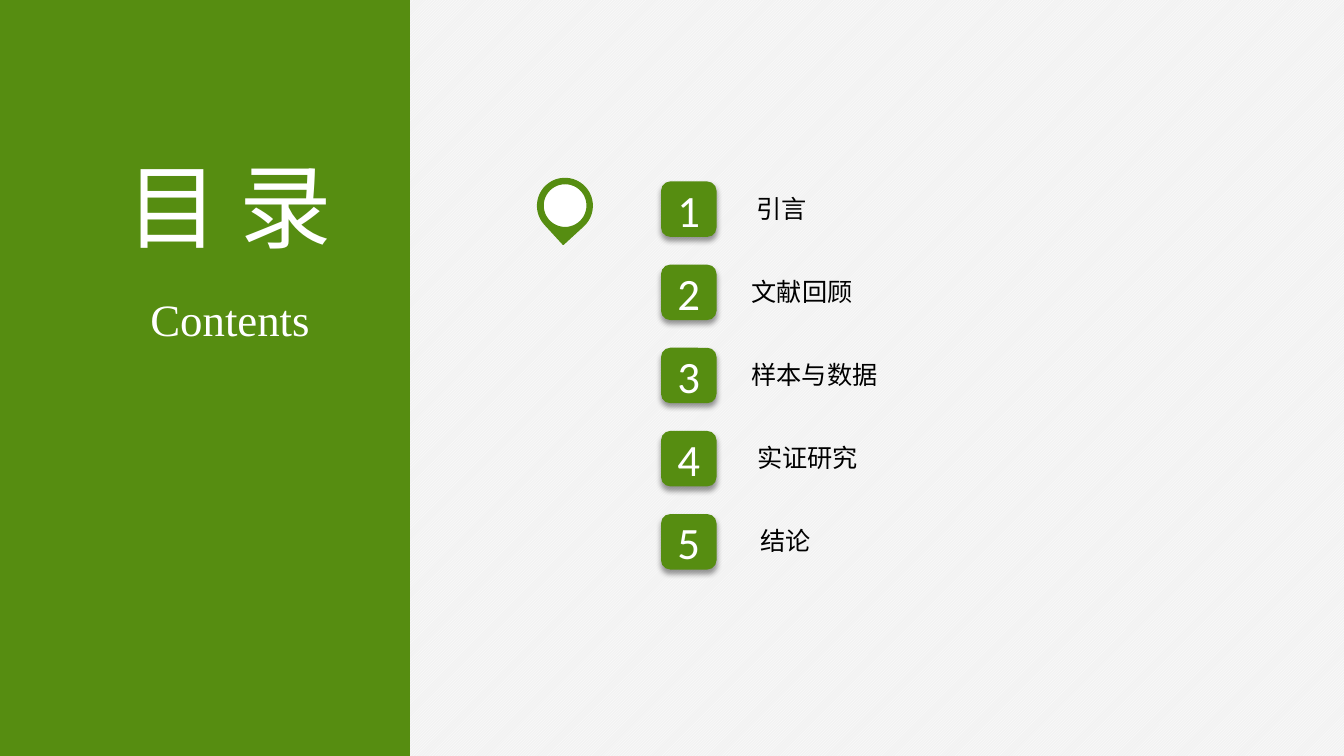
from dataclasses import dataclass

from lxml.etree import SubElement
from pptx import Presentation
from pptx.dml.color import RGBColor
from pptx.enum.dml import MSO_PATTERN
from pptx.enum.shapes import MSO_SHAPE as Shape
from pptx.enum.text import MSO_ANCHOR as Anchor, MSO_AUTO_SIZE as AutoSize, PP_ALIGN as Align
from pptx.oxml.ns import qn
from pptx.util import Emu, Pt

COLS, ROWS = 160, 90
UNIT = 76200  # one grid cell is 1/12 inch square

GREEN = RGBColor(0x56, 0x8D, 0x11)
WHITE = RGBColor(0xFF, 0xFF, 0xFF)
BLACK = RGBColor(0x00, 0x00, 0x00)
PALE_GREY = RGBColor(0xF2, 0xF2, 0xF2)

CJK, SERIF, SANS = "Noto Sans CJK SC", "Times New Roman", "Calibri"

BADGE_COL, BADGE_ROW, BADGE_SIZE = 78.7, 21.6, 6.6
LABEL_ROW, LABEL_HEIGHT = 22.4, 4.8
PITCH = 9.9


@dataclass(frozen=True)
class Box:
    """A rectangle in grid columns and rows."""
    col: float
    row: float
    cols: float
    rows: float

    def emu(self) -> list[Emu]:
        return [Emu(round(v * UNIT)) for v in (self.col, self.row, self.cols, self.rows)]


@dataclass(frozen=True)
class TextStyle:
    font: str
    size: float
    color: RGBColor


@dataclass(frozen=True)
class Chapter:
    title: str
    col: float
    align: Align = Align.CENTER


CHAPTERS = [
    Chapter("引言", 88.8),
    Chapter("文献回顾", 88.3, Align.LEFT),
    Chapter("样本与数据", 88.3, Align.LEFT),
    Chapter("实证研究", 88.9),
    Chapter("结论", 89.3),
]
BADGE_STYLE = TextStyle(SANS, 32, WHITE)
LABEL_STYLE = TextStyle(CJK, 18, BLACK)


def write(s, text: str, style: TextStyle, align: Align = Align.CENTER) -> None:
    p = s.text_frame.paragraphs[0]
    p.alignment = align
    r = p.add_run()
    r.text = text
    r.font.size = Pt(style.size)
    r.font.color.rgb = style.color
    r.font.name = style.font
    SubElement(r.font._element, qn("a:ea"), typeface=style.font)


def add_text(shapes, box: Box, text: str, style: TextStyle, align: Align = Align.CENTER) -> None:
    s = shapes.add_textbox(*box.emu())
    s.text_frame.word_wrap = False
    s.text_frame.auto_size = AutoSize.SHAPE_TO_FIT_TEXT
    write(s, text, style, align)


def add_filled(shapes, kind: Shape, box: Box, fill: RGBColor, line: RGBColor | None = None):
    s = shapes.add_shape(kind, *box.emu())
    s.shadow.inherit = False
    s.fill.solid()
    s.fill.fore_color.rgb = fill
    if line is None:
        s.line.fill.background()
    else:
        s.line.color.rgb = line
        s.line.width = Pt(1)
    return s


def drop_shadow(s) -> None:
    """Give the shape a soft black shadow straight below it."""
    effects = s._element.spPr.find(qn("a:effectLst"))
    shadow = SubElement(effects, qn("a:outerShdw"), blurRad=str(Pt(4)), dist=str(Pt(3)),
                        dir="5400000", algn="t", rotWithShape="0")
    color = SubElement(shadow, qn("a:srgbClr"), val=str(BLACK))
    SubElement(color, qn("a:alpha"), val="40000")


def add_chapter(shapes, index: int, chapter: Chapter) -> None:
    offset = index * PITCH
    badge = add_filled(shapes, Shape.ROUNDED_RECTANGLE,
                       Box(BADGE_COL, BADGE_ROW + offset, BADGE_SIZE, BADGE_SIZE), GREEN)
    drop_shadow(badge)
    badge.text_frame.vertical_anchor = Anchor.MIDDLE
    write(badge, str(index + 1), BADGE_STYLE)
    width = 2.5 + 3 * len(chapter.title)
    add_text(shapes, Box(chapter.col, LABEL_ROW + offset, width, LABEL_HEIGHT),
             chapter.title, LABEL_STYLE, chapter.align)


def add_title_panel(shapes) -> None:
    add_filled(shapes, Shape.RECTANGLE, Box(0, 0, 48.8, ROWS), GREEN)
    add_text(shapes, Box(12.2, 17.2, 30.2, 14.5), "目 录", TextStyle(CJK, 66, WHITE))
    add_text(shapes, Box(16.6, 34.1, 21.6, 7.7), "Contents", TextStyle(SERIF, 32, WHITE))


def add_pin(shapes) -> None:
    group = shapes.add_group_shape()
    drop = add_filled(group.shapes, Shape.TEAR, Box(64, 21.25, 6.5, 6.5), GREEN, GREEN)
    drop.rotation = 137.5
    add_filled(group.shapes, Shape.OVAL, Box(64.65, 21.85, 5.25, 5.25), WHITE, GREEN)


def main() -> None:
    prs = Presentation()
    prs.slide_width, prs.slide_height = Emu(COLS * UNIT), Emu(ROWS * UNIT)
    slide = prs.slides.add_slide(prs.slide_layouts[6])

    fill = slide.background.fill
    fill.patterned()
    fill.pattern = MSO_PATTERN.LIGHT_UPWARD_DIAGONAL
    fill.fore_color.rgb = WHITE
    fill.back_color.rgb = PALE_GREY

    for index, chapter in enumerate(CHAPTERS):
        add_chapter(slide.shapes, index, chapter)
    add_title_panel(slide.shapes)
    add_pin(slide.shapes)
    prs.save("out.pptx")


if __name__ == "__main__":
    main()
